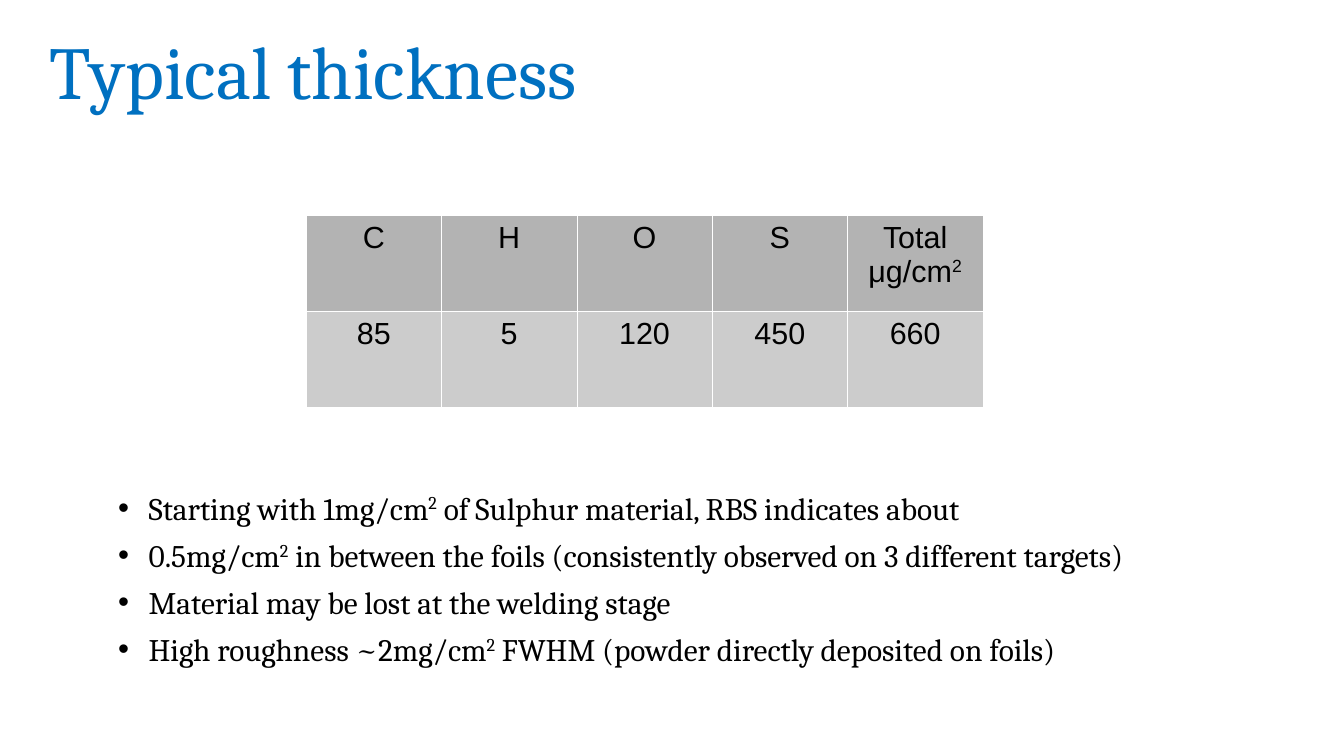
from lxml import etree
from pptx import Presentation
from pptx.dml.color import RGBColor
from pptx.enum.text import MSO_ANCHOR, PP_ALIGN
from pptx.oxml.ns import qn
from pptx.util import Inches, Pt

MIDDLE = MSO_ANCHOR.MIDDLE
TOP = MSO_ANCHOR.TOP
LEFT = PP_ALIGN.LEFT
CENTER = PP_ALIGN.CENTER

TITLE = "Typical thickness"
ROWS = [
    ["C", "H", "O", "S", "Total\nμg/cm|2|"],
    ["85", "5", "120", "450", "660"],
]
POINTS = [
    "Starting with 1mg/cm|2| of Sulphur material, RBS indicates about",
    "0.5mg/cm|2| in between the foils (consistently observed on 3 different targets)",
    "Material may be lost at the welding stage",
    "High roughness ~2mg/cm|2| FWHM (powder directly deposited on foils)",
]
COLORS = {
    "title": "0070C0",
    "text": "000000",
    "head": "B3B3B3",
    "body": "CCCCCC",
    "line": "FFFFFF",
}
TITLE_BOX = (0.31, 0, 9.13, 1.23)
LIST_BOX = (0.87, 4.02, 9.61, 1.81)
GRID_LEFT, GRID_TOP = 2.51, 1.76
COL_W, ROW_H = 1.11, 0.79
INDENT = Inches(0.25)


def add_bullet(para):
    props = para._p.get_or_add_pPr()
    props.set("marL", str(INDENT))
    props.set("indent", str(-INDENT))
    font = etree.SubElement(props, qn("a:buFont"))
    font.set("typeface", "Arial")
    mark = etree.SubElement(props, qn("a:buChar"))
    mark.set("char", "•")


def write(frame, text, size=18, font="Arial", color="text", align=LEFT,
          space=1.0, before=0, bullet=False):
    frame.word_wrap = True
    for row, line in enumerate(text.split("\n")):
        para = frame.paragraphs[0] if row == 0 else frame.add_paragraph()
        para.alignment = align
        para.line_spacing = space
        para.space_before = Pt(before)
        if bullet:
            add_bullet(para)
        for part, words in enumerate(line.split("|")):
            if not words:
                continue
            run = para.add_run()
            run.text = words
            run.font.size = Pt(size)
            run.font.name = font
            run.font.color.rgb = RGBColor.from_string(COLORS[color])
            if part % 2:
                run.font._element.set("baseline", "33000")


def add_box(slide, box, text, anchor=TOP, **style):
    frame = slide.shapes.add_textbox(*map(Inches, box)).text_frame
    frame.vertical_anchor = anchor
    write(frame, text, **style)


def add_edges(cell):
    props = cell._tc.get_or_add_tcPr()
    for side in ("lnL", "lnR", "lnT", "lnB"):
        edge = etree.SubElement(props, qn("a:" + side))
        edge.set("w", str(Pt(0.06)))
        fill = etree.SubElement(edge, qn("a:solidFill"))
        etree.SubElement(fill, qn("a:srgbClr")).set("val", COLORS["line"])


def add_grid(slide):
    rows, cols = len(ROWS), len(ROWS[0])
    table = slide.shapes.add_table(
        rows, cols, Inches(GRID_LEFT), Inches(GRID_TOP),
        Inches(COL_W * cols), Inches(ROW_H * rows)).table
    for col in table.columns:
        col.width = Inches(COL_W)
    for r, texts in enumerate(ROWS):
        table.rows[r].height = Inches(ROW_H)
        for c, text in enumerate(texts):
            cell = table.cell(r, c)
            add_edges(cell)
            cell.fill.solid()
            shade = COLORS["body" if r else "head"]
            cell.fill.fore_color.rgb = RGBColor.from_string(shade)
            write(cell.text_frame, text, align=CENTER)


def main():
    deck = Presentation()
    deck.slide_width, deck.slide_height = Inches(11.02), Inches(6.2)
    slide = deck.slides.add_slide(deck.slide_layouts[6])
    add_box(slide, TITLE_BOX, TITLE, anchor=MIDDLE, size=44, font="Cambria",
            color="title", space=0.9)
    add_box(slide, LIST_BOX, "\n".join(POINTS), size=18.5, font="Cambria",
            space=0.8, before=10, bullet=True)
    add_grid(slide)
    deck.save("out.pptx")


if __name__ == "__main__":
    main()
